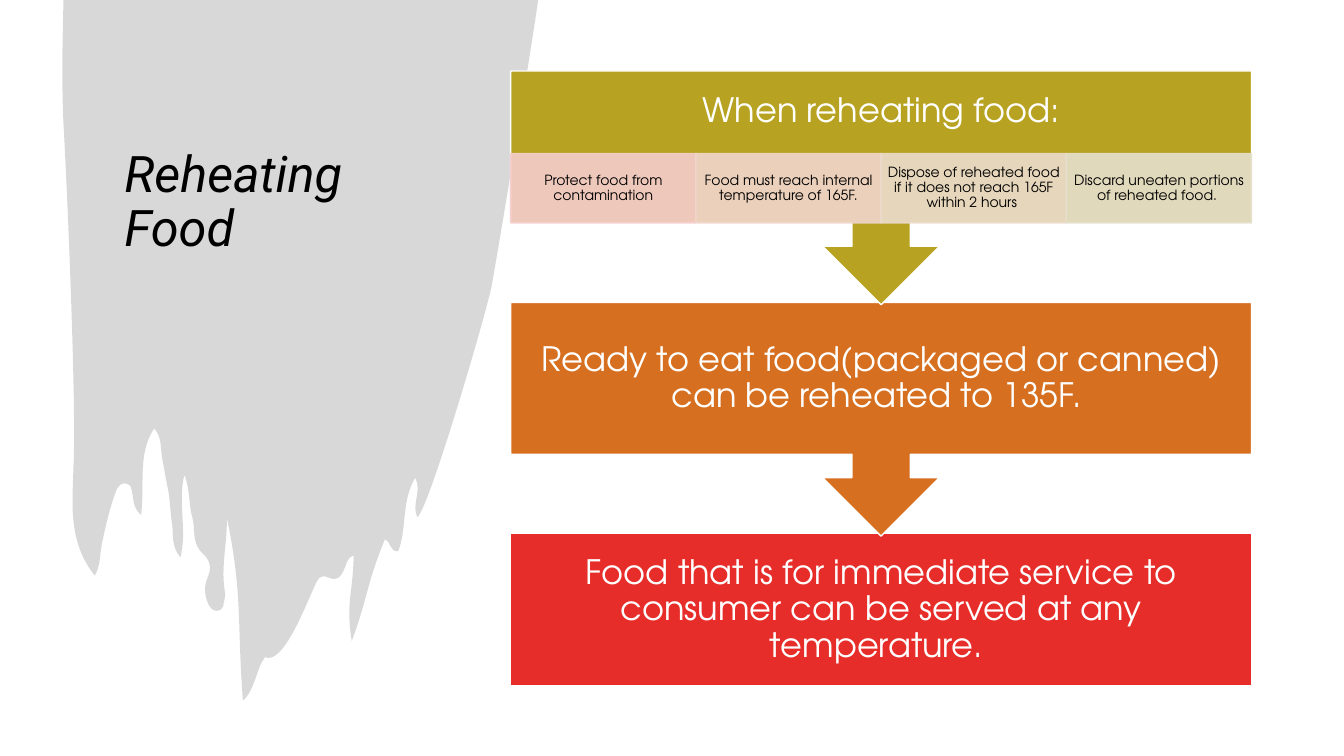
from dataclasses import dataclass

from lxml.etree import SubElement
from pptx import Presentation
from pptx.dml.color import RGBColor
from pptx.enum.shapes import MSO_SHAPE as Shp
from pptx.enum.text import MSO_ANCHOR as Anchor, MSO_AUTO_SIZE as Auto, PP_ALIGN as Align
from pptx.oxml.ns import qn
from pptx.util import Cm, Pt

COLORS = {
    "white": "FFFFFF", "black": "000000", "brush": "404040",
    "olive": "B8A221", "orange": "D66F1F", "red": "E72D29",
    "rose": "F6CDCD", "peach": "F1D6CC", "sand": "ECDCCC", "cream": "E6E0CD",
}
FONT = "TeX Gyre Adventor"
TITLE_FONT = "Roboto"
LEFT, TOP, WIDTH = 12.87, 1.79, 18.67
PITCH, BOX_H, CALLOUT_H = 5.83, 3.84, 5.89
CELL_TOP, CELL_H = 3.87, 1.75

CM_PER_UNIT = 2.54
BRUSH_START = (5.34, 0)
BRUSH_CURVES = [
    (5.22, 0.81, 4.98, 2.26, 4.88, 2.83), (4.81, 3.17, 4.24, 5.09, 4.14, 5.13),
    (4.08, 5, 4.19, 4.87, 4.12, 4.74), (3.98, 4.97, 4.04, 5.25, 3.95, 5.47),
    (3.86, 5.47, 3.88, 5.37, 3.82, 5.35), (3.64, 5.78, 3.65, 5.93, 3.49, 6.36),
    (3.43, 5.97, 3.5, 5.91, 3.51, 5.51), (3.43, 5.54, 3.44, 5.61, 3.41, 5.66),
    (3.38, 5.72, 3.35, 5.77, 3.26, 5.73), (3.17, 5.69, 3.15, 5.75, 3.12, 5.82),
    (3.03, 6.01, 2.81, 6.6, 2.63, 6.52), (2.55, 6.61, 2.53, 6.85, 2.41, 6.95),
    (2.35, 6.16, 2.41, 5.9, 2.25, 5.13), (2.26, 5.37, 2.19, 5.61, 2.23, 5.86),
    (2.24, 5.9, 2.23, 5.94, 2.22, 5.98), (2.22, 6.02, 2.2, 6.06, 2.15, 6.06),
    (2.11, 6.06, 2.09, 6.03, 2.07, 6), (2.03, 5.91, 2.02, 5.82, 2.06, 5.73),
    (2.1, 5.64, 2.09, 5.56, 2.01, 5.49), (1.9, 5.39, 1.94, 5.25, 1.91, 5.14),
    (1.87, 5.01, 1.89, 4.87, 1.83, 4.71), (1.76, 4.99, 1.86, 5.25, 1.79, 5.53),
    (1.7, 5.42, 1.72, 5.31, 1.71, 5.22), (1.69, 5.1, 1.69, 4.98, 1.67, 4.87),
    (1.65, 4.77, 1.63, 4.66, 1.61, 4.55), (1.59, 4.45, 1.61, 4.34, 1.53, 4.25),
    (1.36, 4.51, 1.44, 4.81, 1.4, 5.11), (1.31, 5.03, 1.33, 4.95, 1.31, 4.88),
    (1.3, 4.84, 1.3, 4.81, 1.26, 4.8), (1.21, 4.78, 1.18, 4.82, 1.16, 4.85),
    (1.09, 5.03, 1.05, 5.21, 1.01, 5.4), (0.99, 5.5, 1, 5.61, 0.94, 5.71),
    (0.67, 5.37, 0.72, 4.99, 0.73, 4.61), (0.76, 4, 0.66, 1.74, 0.63, 1.23),
    (0.61, 0.82, 0.62, 0.41, 0.63, 0),
]


@dataclass
class Step:
    text: str
    color: str
    kind: Shp = Shp.DOWN_ARROW_CALLOUT
    height: float = CALLOUT_H
    bottom: float = 0.48


@dataclass
class Rule:
    text: str
    color: str


STEPS = [
    Step("When reheating food:", "olive", bottom=2.25),
    Step("Ready to eat food(packaged or canned) can be reheated to 135F. ", "orange"),
    Step("Food that is for immediate service to consumer can be served at any temperature. ",
         "red", Shp.RECTANGLE, BOX_H),
]
RULES = [
    Rule("Protect food from contamination", "rose"),
    Rule("Food must reach internal temperature of 165F.", "peach"),
    Rule("Dispose of reheated food if it does not reach 165F within 2 hours ", "sand"),
    Rule("Discard uneaten portions of reheated food. ", "cream"),
]


def rgb(name: str) -> RGBColor:
    return RGBColor.from_string(COLORS[name])


def set_alpha(sp, percent: int) -> None:
    for clr in sp._element.spPr.iter(qn("a:srgbClr")):
        SubElement(clr, qn("a:alpha")).set("val", str(percent * 1000))


def write(tf, text: str, size: float, color: str, font: str = FONT,
          align: Align = Align.CENTER, italic: bool = False) -> None:
    tf.word_wrap = True
    tf.auto_size = Auto.NONE
    tf.vertical_anchor = Anchor.MIDDLE
    p = tf.paragraphs[0]
    p.alignment = align
    p.line_spacing = 0.9
    r = p.add_run()
    r.text = text
    r.font.name = font
    r.font.size = Pt(size)
    r.font.italic = italic
    r.font.color.rgb = rgb(color)


def add_box(s, kind: Shp, x: float, y: float, w: float, h: float, fill: str, line: str,
            margins: tuple[float, float, float, float]):
    sp = s.shapes.add_shape(kind, Cm(x), Cm(y), Cm(w), Cm(h))
    sp.shadow.inherit = False
    sp.fill.solid()
    sp.fill.fore_color.rgb = rgb(fill)
    sp.line.color.rgb = rgb(line)
    sp.line.width = Pt(1)
    tf = sp.text_frame
    tf.margin_left, tf.margin_top, tf.margin_right, tf.margin_bottom = map(Cm, margins)
    return sp


def add_step(s, i: int, step: Step) -> None:
    sp = add_box(s, step.kind, LEFT, TOP + i * PITCH, WIDTH, step.height,
                 step.color, "white", (0.48, 0.48, 0.48, step.bottom))
    write(sp.text_frame, step.text, 24, "white")


def add_rule(s, i: int, rule: Rule) -> None:
    w = WIDTH / len(RULES)
    sp = add_box(s, Shp.RECTANGLE, LEFT + i * w, CELL_TOP, w, CELL_H,
                 rule.color, rule.color, (0.15, 0.03, 0.15, 0.03))
    set_alpha(sp, 90)
    write(sp.text_frame, rule.text, 10, "black")


def to_emu(x: float, y: float) -> tuple[int, int]:
    return Cm(x * CM_PER_UNIT), Cm(y * CM_PER_UNIT)


def add_brush(s) -> None:
    builder = s.shapes.build_freeform(*to_emu(*BRUSH_START))
    builder.add_line_segments([to_emu(*c[4:]) for c in BRUSH_CURVES], close=True)
    sp = builder.convert_to_shape()
    for seg, c in zip(list(sp._element.iter(qn("a:lnTo"))), BRUSH_CURVES):
        seg.tag = qn("a:cubicBezTo")
        seg.remove(seg[0])
        for k in (0, 2, 4):
            x, y = to_emu(*c[k:k + 2])
            pt = SubElement(seg, qn("a:pt"))
            pt.set("x", str(x - sp.left))
            pt.set("y", str(y - sp.top))
    sp.shadow.inherit = False
    sp.fill.solid()
    sp.fill.fore_color.rgb = rgb("brush")
    set_alpha(sp, 20)
    sp.line.fill.background()
    s.shapes._spTree.insert(2, sp._element)


def add_title(s) -> None:
    sp = s.shapes.title
    sp.left, sp.top, sp.width, sp.height = Cm(2.88), Cm(1.53), Cm(8.66), Cm(7.19)
    write(sp.text_frame, "Reheating Food", 36, "black", TITLE_FONT, Align.LEFT, True)


def main() -> None:
    prs = Presentation()
    prs.slide_width, prs.slide_height = Cm(33.87), Cm(19.05)
    s = prs.slides.add_slide(prs.slide_layouts[5])
    add_brush(s)
    add_title(s)
    for i, step in reversed(list(enumerate(STEPS))):
        add_step(s, i, step)
    for i, rule in enumerate(RULES):
        add_rule(s, i, rule)
    prs.save("out.pptx")


if __name__ == "__main__":
    main()
